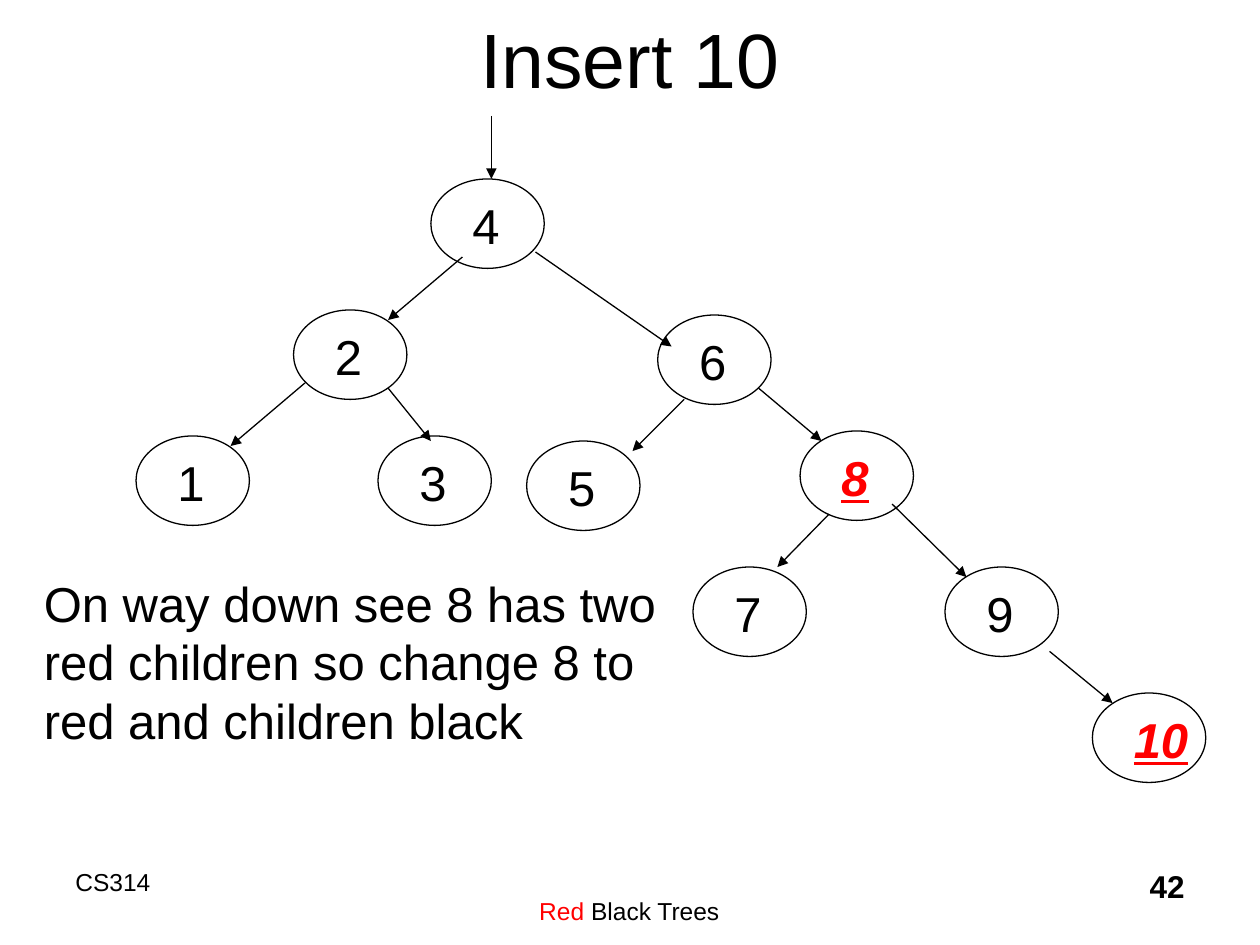
from dataclasses import dataclass
from pptx import Presentation, util as u
from pptx.dml.color import RGBColor as Rgb
from pptx.enum import shapes as sh, text as tx
from pptx.oxml.ns import qn
from lxml import etree

Inch, Pt = u.Inches, u.Pt
Align, Anchor = tx.PP_ALIGN, tx.MSO_ANCHOR


@dataclass(frozen=True)
class Theme:
    font: str = "Arial"
    black: Rgb = Rgb(0, 0, 0)
    red: Rgb = Rgb(255, 0, 0)
    title: int = 44
    body: int = 28
    page: int = 18
    foot: int = 14
    line: float = 0.75


def apply(item, form):
    for key, val in form.items():
        setattr(item, key, val)


class Deck:
    """Holds the theme and the current slide, and draws each kind of element."""

    def __init__(self, theme):
        self.theme = theme
        self.file = Presentation()
        apply(self.file, {"slide_width": Inch(10), "slide_height": Inch(7.5)})
        self.slide = self.file.slides.add_slide(self.file.slide_layouts[6])

    def text(self, box, runs, size, align=Align.LEFT, form=None, home=None):
        home = home or self.slide.shapes
        frame = home.add_textbox(*map(Inch, box)).text_frame
        apply(frame, {"word_wrap": True, **(form or {})})
        para = frame.paragraphs[0]
        para.alignment = align
        for words, color, style in runs:
            for row, line in enumerate(words.split("\n")):
                if row:
                    para.add_line_break()
                run = para.add_run()
                run.text = line
                apply(run.font, {"name": self.theme.font, "size": Pt(size), **style})
                run.font.color.rgb = color

    def stroke(self, line):
        line.color.rgb = self.theme.black
        line.width = Pt(self.theme.line)

    def node(self, key, left, top, red=False):
        home = self.slide.shapes.add_group_shape().shapes
        oval = home.add_shape(sh.MSO_SHAPE.OVAL, *map(Inch, (left, top, 0.9, 0.71)))
        oval.shadow.inherit = False
        oval.fill.background()
        self.stroke(oval.line)
        style = dict.fromkeys(("bold", "italic", "underline"), True) if red else {}
        color = self.theme.red if red else self.theme.black
        wide = 0.2 + 0.22 * len(key)
        self.text((left + 0.23, top + 0.08, wide, 0.57), [(key, color, style)],
                  self.theme.body, form={"word_wrap": False}, home=home)

    def arrow(self, *ends):
        link = self.slide.shapes.add_connector(sh.MSO_CONNECTOR.STRAIGHT, *map(Inch, ends))
        self.stroke(link.line)
        tail = etree.SubElement(link.line._get_or_add_ln(), qn("a:tailEnd"))
        tail.set("type", "triangle")
        etree.SubElement(link._element.spPr, qn("a:effectLst"))


NODES = [
    ("4", 3.42, 1.42), ("2", 2.33, 2.46), ("6", 5.22, 2.5),
    ("1", 1.08, 3.46), ("3", 3, 3.46), ("5", 4.18, 3.5),
    ("8", 6.35, 3.42, True), ("7", 5.5, 4.5), ("9", 7.5, 4.5),
    ("10", 8.67, 5.5, True),
]
ARROWS = [
    (3.9, 0.92, 3.9, 1.42), (3.67, 2.04, 3.08, 2.54), (4.25, 2, 5.33, 2.75),
    (2.42, 3.04, 1.83, 3.54), (3.08, 3.08, 3.42, 3.5), (5.43, 3.17, 5.02, 3.58),
    (6.02, 3.08, 6.52, 3.5), (6.58, 4.08, 6.17, 4.5), (7.08, 4, 7.67, 4.58),
    (8.33, 5.17, 8.83, 5.58),
]
ADVICE = "On way down see 8 has two\nred children so change 8 to\nred and children black"


def main():
    theme = Theme()
    deck = Deck(theme)
    black, red = theme.black, theme.red
    deck.text((0.5, 6.83, 2.5, 0.5), [("CS314", black, {})], theme.foot)
    deck.text((3.08, 6.83, 3.83, 0.5), [("Red", red, {}), (" Black Trees", black, {})],
              theme.foot, Align.CENTER, {"margin_top": Inch(0.33), "margin_bottom": 0})
    deck.text((7.42, 6.83, 2.08, 0.5), [("42", black, {"bold": True})],
              theme.page, Align.RIGHT)
    deck.text((0.75, -0.17, 8.5, 1.25), [("Insert 10", black, {})], theme.title,
              Align.CENTER, {"vertical_anchor": Anchor.MIDDLE})
    for node in NODES:
        deck.node(*node)
    for ends in ARROWS:
        deck.arrow(*ends)
    deck.text((0.25, 4.5, 5.07, 1.5), [(ADVICE, black, {})], theme.body,
              form={"word_wrap": False})
    deck.file.save("out.pptx")


if __name__ == "__main__":
    main()
